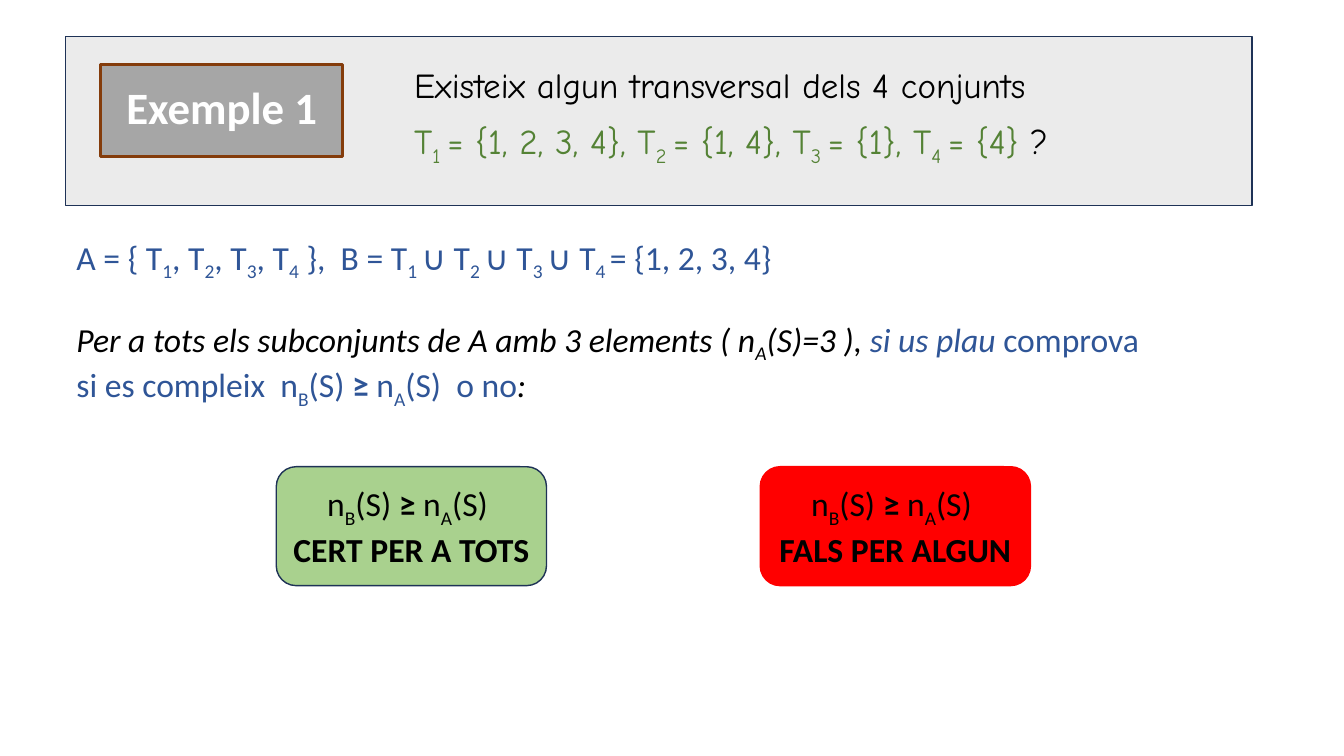
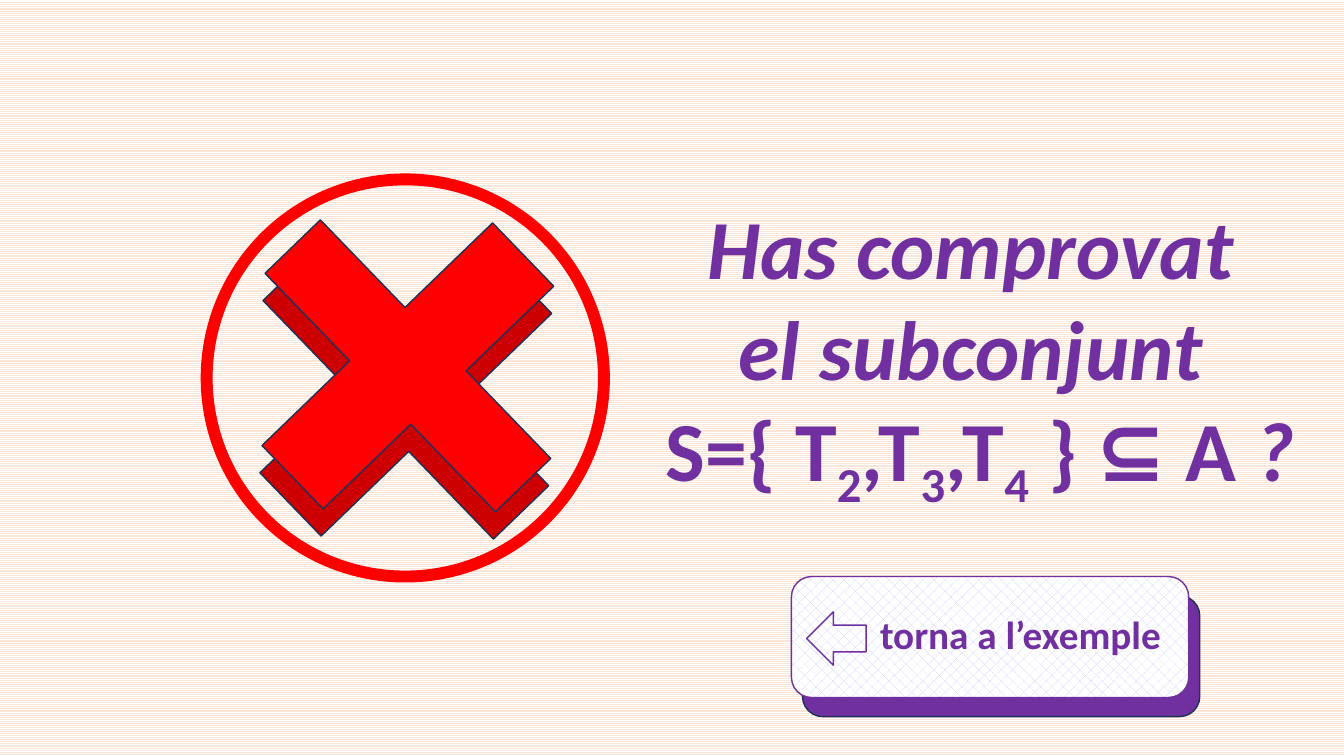
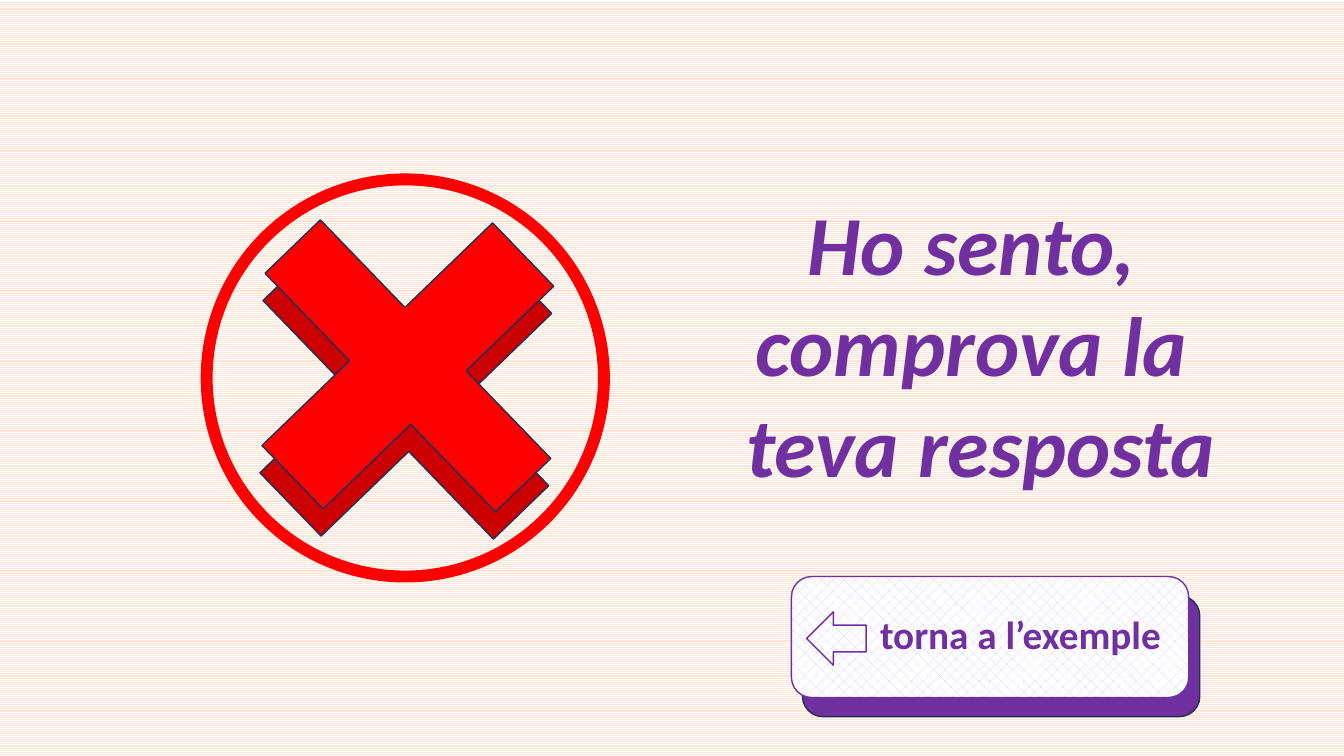
from dataclasses import dataclass

from lxml import etree
from pptx import Presentation
from pptx import util as u
from pptx.dml.color import RGBColor
from pptx.enum import dml, shapes, text
from pptx.oxml import ns

SHAPE = shapes.MSO_SHAPE
ALIGN = text.PP_ALIGN
PATTERN = dml.MSO_PATTERN


@dataclass(frozen=True)
class Theme:
    font: str = "Calibri"
    question_font: str = "Comic Neue"
    black: str = "000000"
    white: str = "FFFFFF"
    blue: str = "2F5597"
    navy: str = "1E3256"
    green: str = "548235"
    light_green: str = "A9D18E"
    red: str = "FF0000"
    dark_red: str = "CC0000"
    purple: str = "7030A0"
    lilac: str = "CCCCFF"
    peach: str = "FBE5D6"
    panel: str = "D9D9D9"
    grey: str = "A6A6A6"
    brown: str = "843C0B"
    body: int = 24
    question: int = 25
    button: int = 28
    label: int = 32
    verdict: int = 60


THEME = Theme()
CONDITION = [("n~B~(S) ", {}), ("≥ ", {"bold": True}), ("n~A~(S)", {})]


def color(code):
    return RGBColor.from_string(code)


def paint(fill, paint_value):
    """Apply None, a colour, or a (pattern, foreground, background) tuple."""
    if paint_value is None:
        fill.background()
    elif isinstance(paint_value, tuple):
        pattern, front, back = paint_value
        fill.patterned()
        fill.pattern = pattern
        fill.fore_color.rgb = color(front)
        fill.back_color.rgb = color(back)
    else:
        fill.solid()
        fill.fore_color.rgb = color(paint_value)


def add_spans(para, words, font=THEME.font, size=THEME.body, ink=THEME.black,
              bold=False, italic=False):
    """Add text to a paragraph; parts between tildes become subscripts."""
    for index, part in enumerate(words.split("~")):
        if not part:
            continue
        span = para.add_run()
        span.text = part
        span.font.name = font
        span.font.size = u.Pt(size)
        span.font.bold = bold
        span.font.italic = italic
        span.font.color.rgb = color(ink)
        if index % 2:
            span.font._element.set("baseline", "-25000")


class Deck:
    def __init__(self, theme):
        self.theme = theme
        self.deck = Presentation()
        self.deck.slide_width = u.Inches(13.33)
        self.deck.slide_height = u.Inches(7.5)
        self.page = None

    def add_page(self, background):
        self.page = self.deck.slides.add_slide(self.deck.slide_layouts[5])
        paint(self.page.background.fill, background)

    def set_text(self, box, lines, align=ALIGN.LEFT, anchor=text.MSO_ANCHOR.TOP,
                 wrap=True, spacing=1.0, before=0, left=0.1, **style):
        """Fill a box with lines, each a list of (text, format) pairs."""
        frame = box.text_frame
        frame.word_wrap = wrap
        frame.auto_size = text.MSO_AUTO_SIZE.NONE
        frame.vertical_anchor = anchor
        frame.margin_left = u.Inches(left)
        frame.margin_right = u.Inches(0.1)
        frame.margin_top = frame.margin_bottom = u.Inches(0.05)
        for index, line in enumerate(lines):
            para = frame.add_paragraph() if index else frame.paragraphs[0]
            para.alignment = align
            para.line_spacing = spacing
            para.space_before = u.Pt(before)
            for words, changes in line:
                add_spans(para, words, **{**style, **changes})

    def text(self, at, lines, **style):
        box = self.page.shapes.add_textbox(*map(u.Inches, at))
        self.set_text(box, lines, **style)

    def title(self, at, lines, **style):
        """Place the title above everything drawn so far."""
        box = self.page.shapes.title
        box.left, box.top, box.width, box.height = map(u.Inches, at)
        self.set_text(box, lines, align=ALIGN.CENTER, **style)
        self.page.shapes._spTree.append(box._element)
        return box

    def shape(self, kind, at, fill=None, line=THEME.navy, width=1, turn=0):
        box = self.page.shapes.add_shape(kind, *map(u.Inches, at))
        box.shadow.inherit = False
        box.rotation = turn
        paint(box.fill, fill)
        self.outline(box, line, width)
        return box

    def outline(self, box, line, width):
        box.line.color.rgb = color(line)
        box.line.width = u.Pt(width)

    def panel(self, at):
        box = self.shape(SHAPE.RECTANGLE, at, self.theme.panel)
        tint = box._element.spPr.find(ns.qn("a:solidFill")).find(ns.qn("a:srgbClr"))
        etree.SubElement(tint, ns.qn("a:alpha"), val="50000")

    def answer(self, left, fill, line, verdict):
        box = self.shape(SHAPE.ROUNDED_RECTANGLE, (left, 4.63, 2.68, 1.18), fill, line)
        self.set_text(box, [CONDITION + [(" ", {})], [(verdict, {"bold": True})]],
                      align=ALIGN.CENTER, anchor=text.MSO_ANCHOR.MIDDLE)

    def cross(self):
        """Draw a ringed cross with a darker, offset cross behind it."""
        theme = self.theme
        self.shape(SHAPE.FLOWCHART_CONNECTOR, (2.05, 1.78, 3.94, 3.94),
                   line=theme.red, width=8.5)
        for left, top, fill in ((2.38, 2.31, theme.dark_red), (2.4, 2.04, theme.red)):
            bar = self.shape(SHAPE.CROSS, (left, top, 3.29, 3.18), fill, turn=46)
            bar.adjustments[0] = 0.38

    def back_button(self):
        theme = self.theme
        self.shape(SHAPE.ROUNDED_RECTANGLE, (7.96, 5.91, 3.94, 1.2), theme.purple)
        face = self.shape(SHAPE.ROUNDED_RECTANGLE, (7.85, 5.72, 3.94, 1.2),
                          (PATTERN.PERCENT_25, theme.lilac, theme.white), theme.purple)
        self.set_text(face, [[("torna a l’exemple", {})]], align=ALIGN.CENTER,
                      anchor=text.MSO_ANCHOR.MIDDLE, spacing=0.9, left=0.7,
                      size=theme.button, ink=theme.purple, bold=True)
        self.shape(SHAPE.LEFT_ARROW, (8, 6.07, 0.59, 0.53), line=theme.purple)

    def feedback(self, at, lines):
        """Build a whole wrong-answer page."""
        theme = self.theme
        self.add_page((PATTERN.LIGHT_HORIZONTAL, theme.peach, theme.white))
        self.title(at, lines, wrap=False, size=theme.verdict, ink=theme.purple,
                   bold=True, italic=True)
        self.cross()
        self.back_button()

    def exercise(self):
        theme = self.theme
        black, blue = {"ink": theme.black}, {"ink": theme.blue}
        self.add_page(theme.white)
        self.text((0.66, 2.3, 11.67, 0.6), [[
            ("A = { T~1~, T~2~, T~3~, T~4~ },  B = T~1 ~∪ T~2 ~∪ T~3 ~∪ T~4 ~"
             "= {1, 2, 3, 4}", blue)]])
        self.text((0.66, 3.11, 12.1, 0.91), [
            [("Per a tots els subconjunts de A amb 3 elements ( n~A~(S)=3 ), ",
              {**black, "italic": True}),
             ("si us plau ", {"italic": True}), ("comprova", {})],
            [("si es compleix  ", {}), *CONDITION, ("  o no", {}),
             (":", {**black, "italic": True})],
        ], ink=theme.blue)
        self.answer(2.74, theme.light_green, theme.navy, "CERT PER A TOTS")
        self.answer(7.54, theme.red, theme.red, "FALS PER ALGUN")
        self.panel((0.65, 0.36, 11.77, 1.68))
        self.text((4.01, 0.63, 9.03, 1.24), [
            [("Existeix algun transversal dels 4 conjunts", black)],
            [("T~1 ~= {1, 2, 3, 4}, T~2 ~= {1, 4}, T~3 ~= {1}, T~4 ~= {4} ", {}),
             ("?", black)],
        ], font=theme.question_font, size=theme.question, ink=theme.green,
            spacing=0.9, before=10)
        label = self.title((1, 0.64, 2.4, 0.91), [[("Exemple 1", {})]],
                           anchor=text.MSO_ANCHOR.MIDDLE, spacing=0.9,
                           size=theme.label, ink=theme.white, bold=True)
        paint(label.fill, theme.grey)
        self.outline(label, theme.brown, 2)


def main():
    show = Deck(THEME)
    show.exercise()
    show.feedback((6.46, 1.89, 6.52, 3.13), [
        [("Has comprovat ", {})],
        [("el subconjunt ", {})],
        [("S={ T~2~,T~3~,T~4~ } ⊆ A ", {"italic": False}), ("?", {})],
    ])
    show.feedback((7.28, 1.85, 4.9, 3.13), [
        [(line, {})] for line in ("Ho sento, ", "comprova la ", "teva resposta")])
    show.deck.save("out.pptx")


if __name__ == "__main__":
    main()
